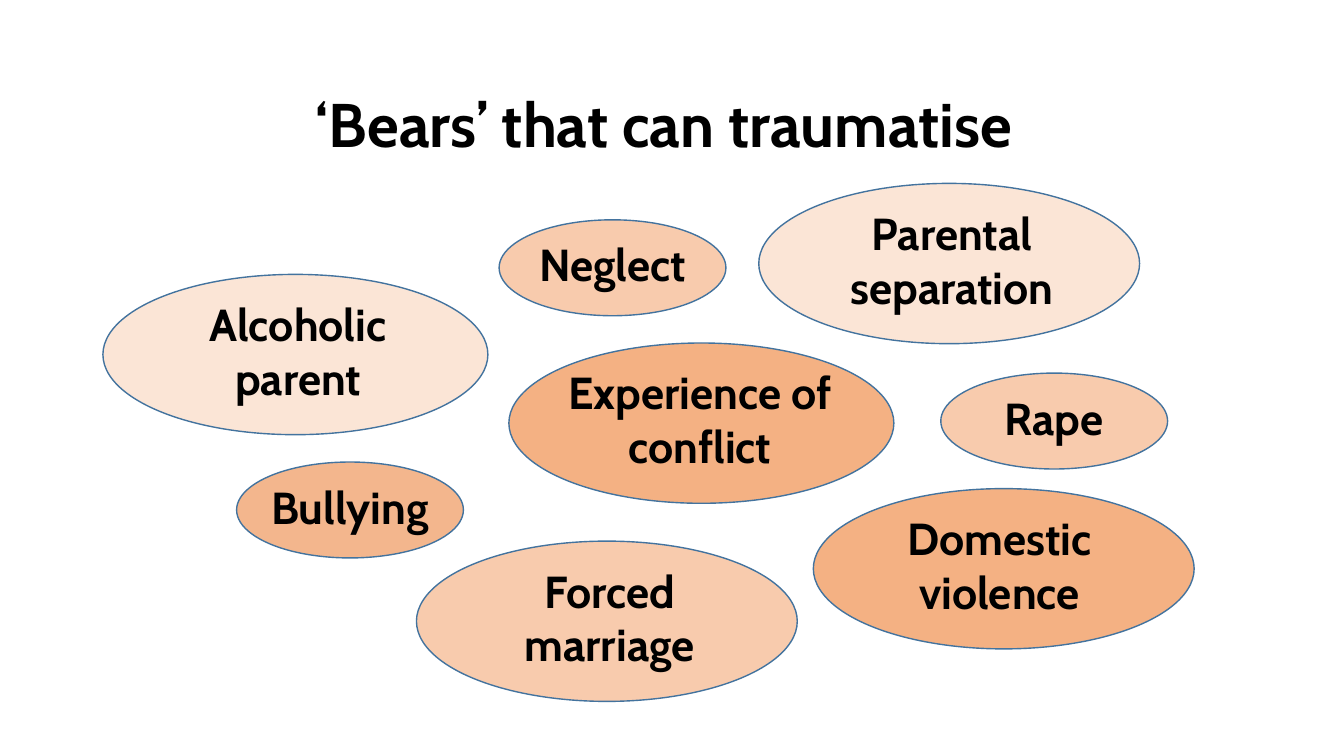
from pptx import Presentation
from pptx.dml.color import RGBColor
from pptx.enum.shapes import MSO_SHAPE
from pptx.enum.text import MSO_ANCHOR, MSO_AUTO_SIZE, PP_ALIGN
from pptx.util import Pt

OVAL = MSO_SHAPE.OVAL
MIDDLE = MSO_ANCHOR.MIDDLE
NO_FIT = MSO_AUTO_SIZE.NONE
CENTER = PP_ALIGN.CENTER

FONT = "Cabin"
BLACK, EDGE = "000000", "43739E"
DEEP, WARM, SOFT, PALE = "F4B183", "F3B68D", "F8CBAD", "FBE5D6"
SMALL, WIDE, BROAD = (162, 68.5), (272, 114.5), (275, 114.5)
LABEL_W, ONE_LINE, TWO_LINES = 204, 46, 85
RISE = 2.5

BEARS = [
    ("Experience of conflict", 363.5, 245, BROAD, DEEP, -1),
    ("Neglect", 356.5, 157, SMALL, SOFT, 0),
    ("Domestic violence", 581, 349, WIDE, DEEP, -3),
    ("Parental separation", 542, 131, WIDE, PALE, 2),
    ("Bullying", 169, 330, SMALL, WARM, 0),
    ("Forced marriage", 297.5, 386.5, WIDE, SOFT, 2),
    ("Rape", 672, 266.5, SMALL, SOFT, 0),
    ("Alcoholic parent", 73.5, 196, BROAD, PALE, 2),
]


def color(code):
    """Turn a hex string into a colour."""
    return RGBColor.from_string(code)


def write(frame, text, size):
    """Set centred bold text in a frame and return its paragraph."""
    frame.text = text
    frame.word_wrap = True
    para = frame.paragraphs[0]
    para.alignment = CENTER
    font = para.runs[0].font
    font.name, font.size, font.bold = FONT, Pt(size), True
    font.color.rgb = color(BLACK)
    return para


def add_title(slide, text, left, top, width, height):
    """Place and format the title in its box."""
    title = slide.shapes.title
    title.left, title.top = Pt(left), Pt(top)
    title.width, title.height = Pt(width), Pt(height)
    frame = title.text_frame
    para = write(frame, text, 44)
    frame.auto_size = NO_FIT
    frame.vertical_anchor = MIDDLE
    para.line_spacing = 1.1
    para.space_before, para.space_after = Pt(18), Pt(6)


def add_bear(slide, text, left, top, size, fill, shift):
    """Draw an oval with its label centred, raised and shifted a little."""
    width, height = size
    oval = slide.shapes.add_shape(OVAL, Pt(left), Pt(top), Pt(width), Pt(height))
    oval.shadow.inherit = False
    oval.fill.solid()
    oval.fill.fore_color.rgb = color(fill)
    oval.line.color.rgb = color(EDGE)
    oval.line.width = Pt(1)
    tall = TWO_LINES if " " in text else ONE_LINE
    label = slide.shapes.add_textbox(
        Pt(left + (width - LABEL_W) / 2 + shift),
        Pt(top + (height - tall) / 2 - RISE),
        Pt(LABEL_W), Pt(tall))
    write(label.text_frame, text, 32)


def main():
    """Build the slide and save it."""
    deck = Presentation()
    deck.slide_width, deck.slide_height = Pt(960), Pt(540)
    slide = deck.slides.add_slide(deck.slide_layouts[5])
    add_title(slide, "‘Bears’ that can traumatise", 60.5, 51, 828, 68.5)
    for bear in BEARS:
        add_bear(slide, *bear)
    deck.save("out.pptx")


if __name__ == "__main__":
    main()
